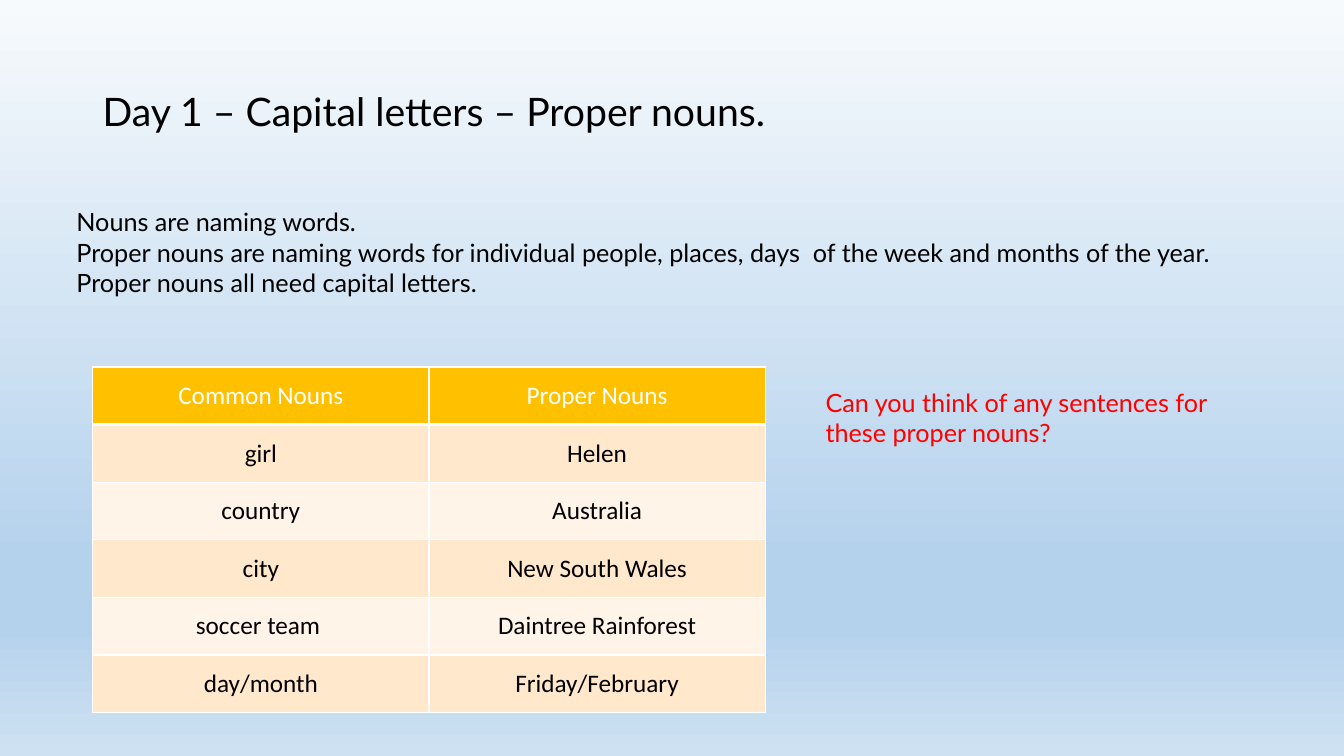
from lxml.etree import SubElement
from pptx import Presentation
from pptx.dml.color import RGBColor
from pptx.enum.text import MSO_ANCHOR as Anchor, PP_ALIGN as Align
from pptx.oxml.ns import qn
from pptx.util import Inches, Pt

COLORS = {
    "black": "000000",
    "white": "FFFFFF",
    "red": "FF0000",
    "header": "FFC000",
    "odd_row": "FFE8CC",
    "even_row": "FFF4E7",
    "sky_top": "F7FAFD",
    "sky_deep": "B5D2EC",
    "sky_bottom": "CEE1F2",
}
SKY_STOPS = [(0, "sky_top"), (74, "sky_deep"), (83, "sky_deep"), (100, "sky_bottom")]

INTRODUCTION = [
    "Nouns are naming words.",
    "Proper nouns are naming words for individual people, places, days  of the week and months of the year.",
    "Proper nouns all need capital letters.",
]
NOUNS = [
    ("Common Nouns", "Proper Nouns"),
    ("girl", "Helen"),
    ("country", "Australia"),
    ("city", "New South Wales"),
    ("soccer team ", "Daintree Rainforest"),
    ("day/month", "Friday/February"),
]


def write_text(frame, lines, font="Lato", size=18, color="black",
               align=Align.LEFT, anchor=Anchor.TOP, line_spacing=None):
    """Fill a text frame with one paragraph per line, all in one format."""
    frame.word_wrap = True
    frame.vertical_anchor = anchor
    for index, line in enumerate(lines):
        paragraph = frame.add_paragraph() if index else frame.paragraphs[0]
        paragraph.alignment = align
        paragraph.line_spacing = line_spacing
        run = paragraph.add_run()
        run.text = line
        run.font.name = font
        run.font.size = Pt(size)
        run.font.color.rgb = RGBColor.from_string(COLORS[color])


class LessonSlide:
    def __init__(self, presentation):
        self.slide = presentation.slides.add_slide(presentation.slide_layouts[6])

    def background(self, stops):
        """Paint a top-to-bottom gradient from (percent, color name) stops."""
        fill = self.slide.background.fill
        fill.gradient()
        fill.gradient_angle = 270
        stop_list = next(self.slide.element.iter(qn("a:gsLst")))
        for stop in list(stop_list):
            stop_list.remove(stop)
        for percent, color in stops:
            stop = SubElement(stop_list, qn("a:gs"), pos=str(percent * 1000))
            SubElement(stop, qn("a:srgbClr"), val=COLORS[color])

    def text(self, lines, left, top, width, height, **text_format):
        box = self.slide.shapes.add_textbox(
            Inches(left), Inches(top), Inches(width), Inches(height))
        write_text(box.text_frame, lines, **text_format)

    def table(self, rows, left, top, width, height):
        shape = self.slide.shapes.add_table(
            len(rows), len(rows[0]),
            Inches(left), Inches(top), Inches(width), Inches(height))
        for row_index, row in enumerate(rows):
            is_header = row_index == 0
            fill = "header" if is_header else ("even_row", "odd_row")[row_index % 2]
            for column_index, word in enumerate(row):
                cell = shape.table.cell(row_index, column_index)
                write_text(cell.text_frame, [word], font="Calibri", align=Align.CENTER,
                           color="white" if is_header else "black")
                cell.vertical_anchor = Anchor.MIDDLE
                self.borders(cell, bottom=3 if is_header else 1)
                cell.fill.solid()
                cell.fill.fore_color.rgb = RGBColor.from_string(COLORS[fill])

    def borders(self, cell, bottom):
        """Give a cell white borders, 1 pt wide except at the bottom."""
        properties = cell._tc.get_or_add_tcPr()
        for side, width in (("L", 1), ("R", 1), ("T", 1), ("B", bottom)):
            line = SubElement(properties, qn(f"a:ln{side}"), w=str(Pt(width)))
            fill = SubElement(line, qn("a:solidFill"))
            SubElement(fill, qn("a:srgbClr"), val=COLORS["white"])


def main():
    presentation = Presentation()
    presentation.slide_width = Inches(13.33)
    presentation.slide_height = Inches(7.5)

    lesson = LessonSlide(presentation)
    lesson.background(SKY_STOPS)
    lesson.text(["Day 1 – Capital letters – Proper nouns."], 0.92, 0.4, 11.98, 1.45,
                size=28, anchor=Anchor.MIDDLE, line_spacing=0.9)
    lesson.text(INTRODUCTION, 0.66, 2, 12, 1.31)
    lesson.table(NOUNS, 0.92, 3.64, 6.67, 3.43)
    lesson.text(["Can you think of any sentences for these proper nouns?"],
                8.09, 3.79, 4.56, 1.01, color="red")

    presentation.save("out.pptx")


if __name__ == "__main__":
    main()
